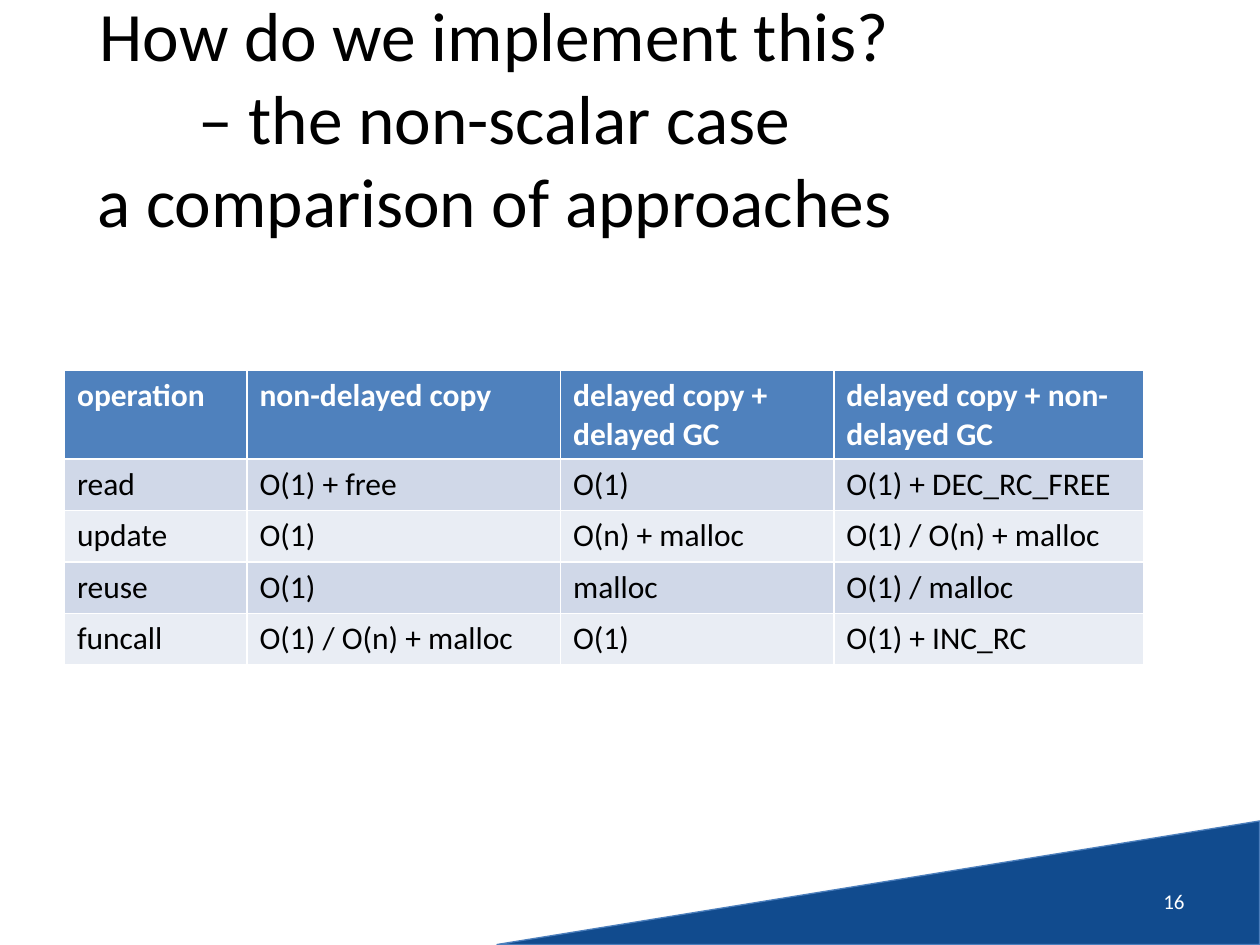
from dataclasses import dataclass

from lxml.etree import SubElement
from pptx import Presentation
from pptx.dml.color import RGBColor
from pptx.enum.shapes import MSO_SHAPE
from pptx.enum.text import MSO_ANCHOR, MSO_AUTO_SIZE, PP_ALIGN
from pptx.oxml.ns import qn
from pptx.util import Cm, Pt

FONT = "Calibri"
HEADER_FILL = "4F81BD"
BAND_FILLS = ("D0D8E8", "E9EDF4")
COLUMN_WIDTHS = (3.68, 6.32, 5.51, 6.25)
HEADER_HEIGHT = 1.78
ROW_HEIGHT = 1.04


@dataclass(frozen=True)
class Area:
    left: float
    top: float
    width: float
    height: float

    def lengths(self) -> tuple:
        return Cm(self.left), Cm(self.top), Cm(self.width), Cm(self.height)


@dataclass(frozen=True)
class Operation:
    name: str
    non_delayed_copy: str
    delayed_collection: str
    non_delayed_collection: str

    def values(self) -> tuple:
        return (self.name, self.non_delayed_copy,
                self.delayed_collection, self.non_delayed_collection)


HEADER = Operation("operation", "non-delayed copy", "delayed copy + delayed GC",
                   "delayed copy + non-delayed GC")
OPERATIONS = (
    Operation("read", "O(1) + free", "O(1)", "O(1) + DEC_RC_FREE"),
    Operation("update", "O(1)", "O(n) + malloc", "O(1) / O(n) + malloc"),
    Operation("reuse", "O(1)", "malloc", "O(1) / malloc"),
    Operation("funcall", "O(1) / O(n) + malloc", "O(1)", "O(1) + INC_RC"),
)


def color(value: str) -> RGBColor:
    return RGBColor.from_string(value)


def paint(item, value: str) -> None:
    item.fill.solid()
    item.fill.fore_color.rgb = color(value)


def write(frame, text: str, size: float, ink: str, bold: bool = False, align=None) -> None:
    frame.text = text
    for para in frame.paragraphs:
        para.alignment = align
        for span in para.runs:
            span.font.name = FONT
            span.font.size = Pt(size)
            span.font.bold = bold
            span.font.color.rgb = color(ink)


def add_shadow(shape) -> None:
    shape.shadow.inherit = False
    effects = shape._element.spPr.find(qn("a:effectLst"))
    shadow = SubElement(effects, qn("a:outerShdw"), blurRad=str(Pt(3.1)),
                        dist=str(Pt(1.8)), dir="5400000", rotWithShape="0")
    tone = SubElement(shadow, qn("a:srgbClr"), val="000000")
    SubElement(tone, qn("a:alpha"), val="35000")


def add_corner(page, area: Area) -> None:
    corner = page.shapes.add_shape(MSO_SHAPE.RIGHT_TRIANGLE, *area.lengths())
    corner.rotation = 270
    paint(corner, "114B8E")
    corner.line.color.rgb = color("4B7EBC")
    corner.line.width = Pt(0.75)
    add_shadow(corner)


def set_title(page, text: str, area: Area) -> None:
    title = page.shapes.title
    title.left, title.top, title.width, title.height = area.lengths()
    frame = title.text_frame
    frame.auto_size = MSO_AUTO_SIZE.NONE
    frame.vertical_anchor = MSO_ANCHOR.MIDDLE
    write(frame, text, 39.6, "000000", align=PP_ALIGN.CENTER)


def add_page_number(page, number: int, area: Area) -> None:
    frame = page.shapes.add_textbox(*area.lengths()).text_frame
    frame.word_wrap = True
    frame.vertical_anchor = MSO_ANCHOR.MIDDLE
    write(frame, str(number), 12, "FFFFFF", align=PP_ALIGN.RIGHT)


def add_comparison(page, left: float, top: float) -> None:
    rows = (HEADER, *OPERATIONS)
    area = Area(left, top, sum(COLUMN_WIDTHS), HEADER_HEIGHT + ROW_HEIGHT * len(OPERATIONS))
    table = page.shapes.add_table(len(rows), len(COLUMN_WIDTHS), *area.lengths()).table
    for column, width in zip(table.columns, COLUMN_WIDTHS):
        column.width = Cm(width)
    for index, (row, operation) in enumerate(zip(table.rows, rows)):
        is_header = index == 0
        row.height = Cm(HEADER_HEIGHT if is_header else ROW_HEIGHT)
        fill = HEADER_FILL if is_header else BAND_FILLS[(index - 1) % 2]
        ink = "FFFFFF" if is_header else "000000"
        for cell, text in zip(row.cells, operation.values()):
            paint(cell, fill)
            write(cell.text_frame, text, 18, ink, bold=is_header)


def main() -> None:
    deck = Presentation()
    deck.slide_width, deck.slide_height = Cm(25.4), Cm(19.05)
    page = deck.slides.add_slide(deck.slide_layouts[5])
    add_corner(page, Area(16.46, 10.11, 2.49, 15.37))
    set_title(page, "How do we implement this? – the non-scalar case\va comparison of approaches",
              Area(1.27, 0.76, 17.4, 3.18))
    add_page_number(page, 16, Area(18.21, 17.65, 5.92, 1.02))
    add_comparison(page, 1.3, 7.47)
    deck.save("out.pptx")


if __name__ == "__main__":
    main()
